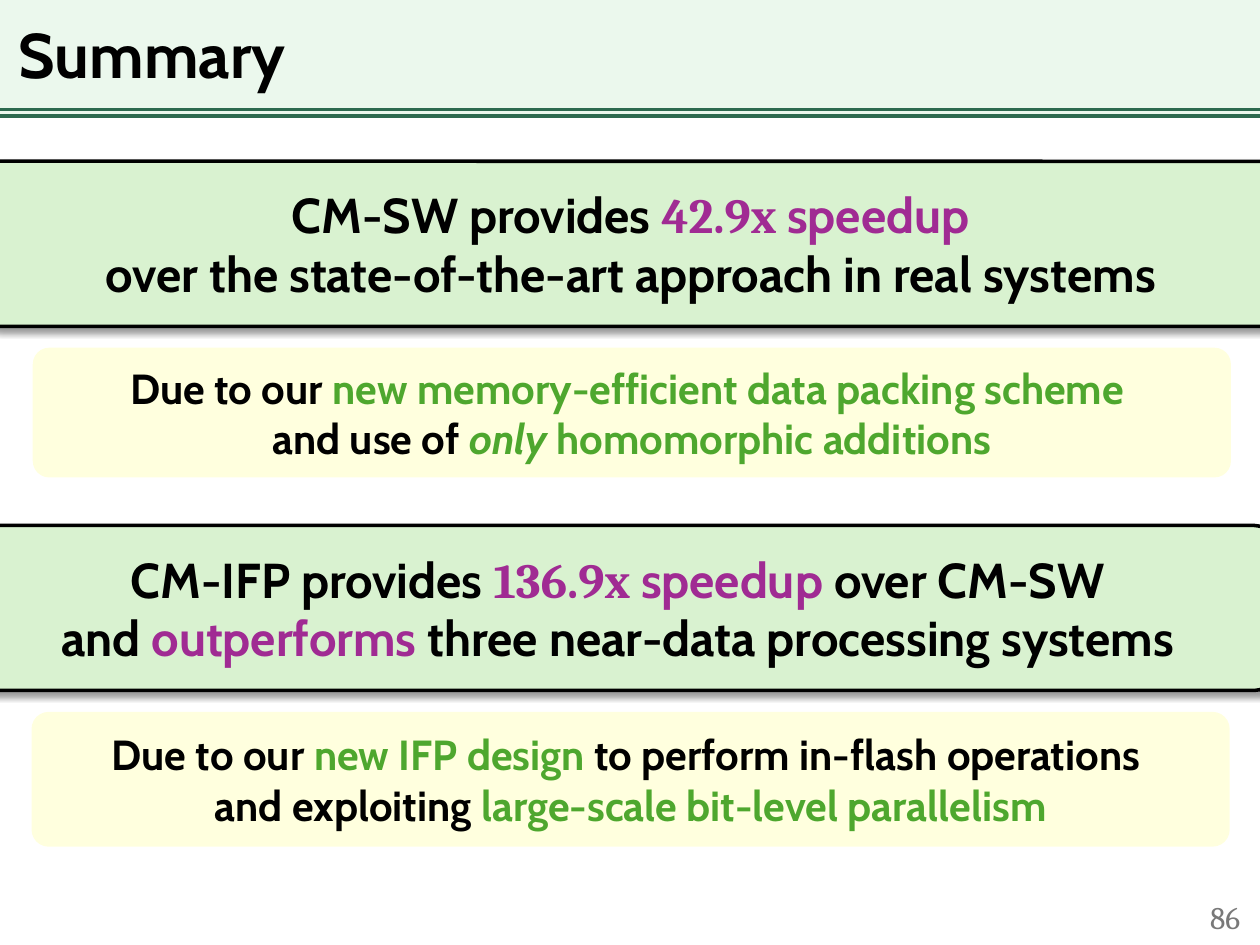
from dataclasses import dataclass

from lxml import etree
from pptx import Presentation
from pptx.dml.color import RGBColor
from pptx.enum.shapes import MSO_CONNECTOR, MSO_SHAPE
from pptx.enum.text import MSO_ANCHOR, MSO_AUTO_SIZE, PP_ALIGN
from pptx.oxml.ns import qn
from pptx.util import Inches, Pt

RECT = MSO_SHAPE.RECTANGLE
ROUNDED = MSO_SHAPE.ROUNDED_RECTANGLE
STRAIGHT = MSO_CONNECTOR.STRAIGHT
MIDDLE = MSO_ANCHOR.MIDDLE
LEFT, CENTER, RIGHT = PP_ALIGN.LEFT, PP_ALIGN.CENTER, PP_ALIGN.RIGHT
TITLE_ONLY = 5


@dataclass(frozen=True)
class Theme:
    font: str = "Cabin"
    number_font: str = "Cambria"
    text: str = "000000"
    purple: str = "A02B93"
    green: str = "4EA72E"
    gray: str = "797979"
    header: str = "D8F3DD"
    rule: str = "2D6A4F"
    finding: str = "D9F2D0"
    reason: str = "FFFF00"
    title_size: int = 36
    finding_size: int = 28
    reason_size: int = 24
    page_size: int = 18
    line_width: int = 2
    corner: float = 0.127


THEME = Theme()

# Span styles: colour, font, italic
PLAIN = (THEME.text, THEME.font, False)
PURPLE = (THEME.purple, THEME.font, False)
FIGURE = (THEME.purple, THEME.number_font, False)
GREEN = (THEME.green, THEME.font, False)
GREEN_ITALIC = (THEME.green, THEME.font, True)

# Each finding and reason: box, then lines of (text, style)
FINDINGS = [
    ((-0.17, 1.28, 10.35, 1.31), [
        [("CM-SW provides ", PLAIN), ("42.9x ", FIGURE), ("speedup", PURPLE)],
        [("over the state-of-the-art approach in real systems", PLAIN)],
    ]),
    ((-0.23, 4.17, 10.35, 1.31), [
        [("CM-IFP provides ", PLAIN), ("136.9x ", FIGURE),
         ("speedup ", PURPLE), ("over CM-SW ", PLAIN)],
        [("and", PLAIN), (" outperforms ", PURPLE),
         ("three near-data processing systems ", PLAIN)],
    ]),
]
REASONS = [
    ((0.26, 2.76, 9.51, 1.03), [
        [("Due to our ", PLAIN),
         ("new memory-efficient data packing scheme ", GREEN)],
        [("and use of ", PLAIN), ("only", GREEN_ITALIC),
         (" homomorphic additions", GREEN)],
    ]),
    ((0.25, 5.65, 9.51, 1.07), [
        [("Due to our ", PLAIN), ("new IFP design ", GREEN),
         ("to perform in-flash operations ", PLAIN)],
        [("and exploiting ", PLAIN),
         ("large-scale bit-level parallelism", GREEN)],
    ]),
]


def inches(box):
    return [Inches(length) for length in box]


def format_span(span, size, style, bold=True):
    color, font, italic = style
    span.font.size = Pt(size)
    span.font.name = font
    span.font.bold = bold
    span.font.italic = italic
    span.font.color.rgb = RGBColor.from_string(color)


def set_alpha(shape, percent):
    color = shape.fill._xPr.find(qn("a:solidFill"))[0]
    etree.SubElement(color, qn("a:alpha"), val=str(percent * 1000))


def add_shadow(shape):
    effects = etree.SubElement(shape._element.spPr, qn("a:effectLst"))
    shadow = etree.SubElement(
        effects, qn("a:outerShdw"), blurRad=str(Pt(4)), dist=str(Pt(3)),
        dir=str(45 * 60000), algn="tl", rotWithShape="0")
    color = etree.SubElement(shadow, qn("a:srgbClr"), val=THEME.text)
    etree.SubElement(color, qn("a:alpha"), val="40000")


def add_panel(page, kind, box, fill):
    panel = page.shapes.add_shape(kind, *inches(box))
    panel.fill.solid()
    panel.fill.fore_color.rgb = RGBColor.from_string(fill)
    panel.line.fill.background()
    return panel


def add_header(page, box, title_text):
    left, top, width, height = box
    # Tinted band with a double rule
    band = add_panel(page, RECT, box, THEME.header)
    band.shadow.inherit = False
    set_alpha(band, 50)
    for y in (top + height, top + height - 0.05):
        rule = page.shapes.add_connector(
            STRAIGHT, *inches((left, y, left + width, y)))
        rule.line.color.rgb = RGBColor.from_string(THEME.rule)
        rule.line.width = Pt(THEME.line_width)
        etree.SubElement(rule._element.spPr, qn("a:effectLst"))

    # Title, raised above the band
    title = page.shapes.title
    page.shapes._spTree.append(title._element)
    title.left, title.top, title.width, title.height = inches(
        (left + 0.05, top, width - 0.21, height))
    frame = title.text_frame
    frame.text = title_text
    frame.auto_size = MSO_AUTO_SIZE.NONE
    frame.vertical_anchor = MIDDLE
    para = frame.paragraphs[0]
    para.alignment = LEFT
    para.line_spacing = 0.9
    format_span(para.runs[0], THEME.title_size, PLAIN)


def add_page_number(page, box, number):
    frame = page.shapes.add_textbox(*inches(box)).text_frame
    frame.word_wrap = True
    frame.vertical_anchor = MIDDLE
    frame.text = number
    para = frame.paragraphs[0]
    para.alignment = RIGHT
    format_span(para.runs[0], THEME.page_size,
                (THEME.gray, THEME.number_font, False), bold=False)


def add_message(page, box, lines, fill, size):
    panel = add_panel(page, ROUNDED, box, fill)
    panel.adjustments[0] = THEME.corner
    frame = panel.text_frame
    frame.word_wrap = True
    frame.vertical_anchor = MIDDLE
    for index, line in enumerate(lines):
        para = frame.add_paragraph() if index else frame.paragraphs[0]
        para.alignment = CENTER
        for text, style in line:
            span = para.add_run()
            span.text = text
            format_span(span, size, style)
    return panel


def add_finding(page, box, lines):
    panel = add_message(page, box, lines, THEME.finding, THEME.finding_size)
    panel.line.color.rgb = RGBColor.from_string(THEME.text)
    panel.line.width = Pt(THEME.line_width)
    add_shadow(panel)


def add_reason(page, box, lines):
    panel = add_message(page, box, lines, THEME.reason, THEME.reason_size)
    panel.shadow.inherit = False
    set_alpha(panel, 13)


def main():
    deck = Presentation()
    deck.slide_width, deck.slide_height = Inches(10), Inches(7.5)
    page = deck.slides.add_slide(deck.slide_layouts[TITLE_ONLY])
    add_header(page, (0, 0, 10, 0.92), "Summary")
    add_page_number(page, (7.69, 7.08, 2.25, 0.4), "86")
    for finding, reason in zip(FINDINGS, REASONS):
        add_finding(page, *finding)
        add_reason(page, *reason)
    deck.save("out.pptx")


if __name__ == "__main__":
    main()
